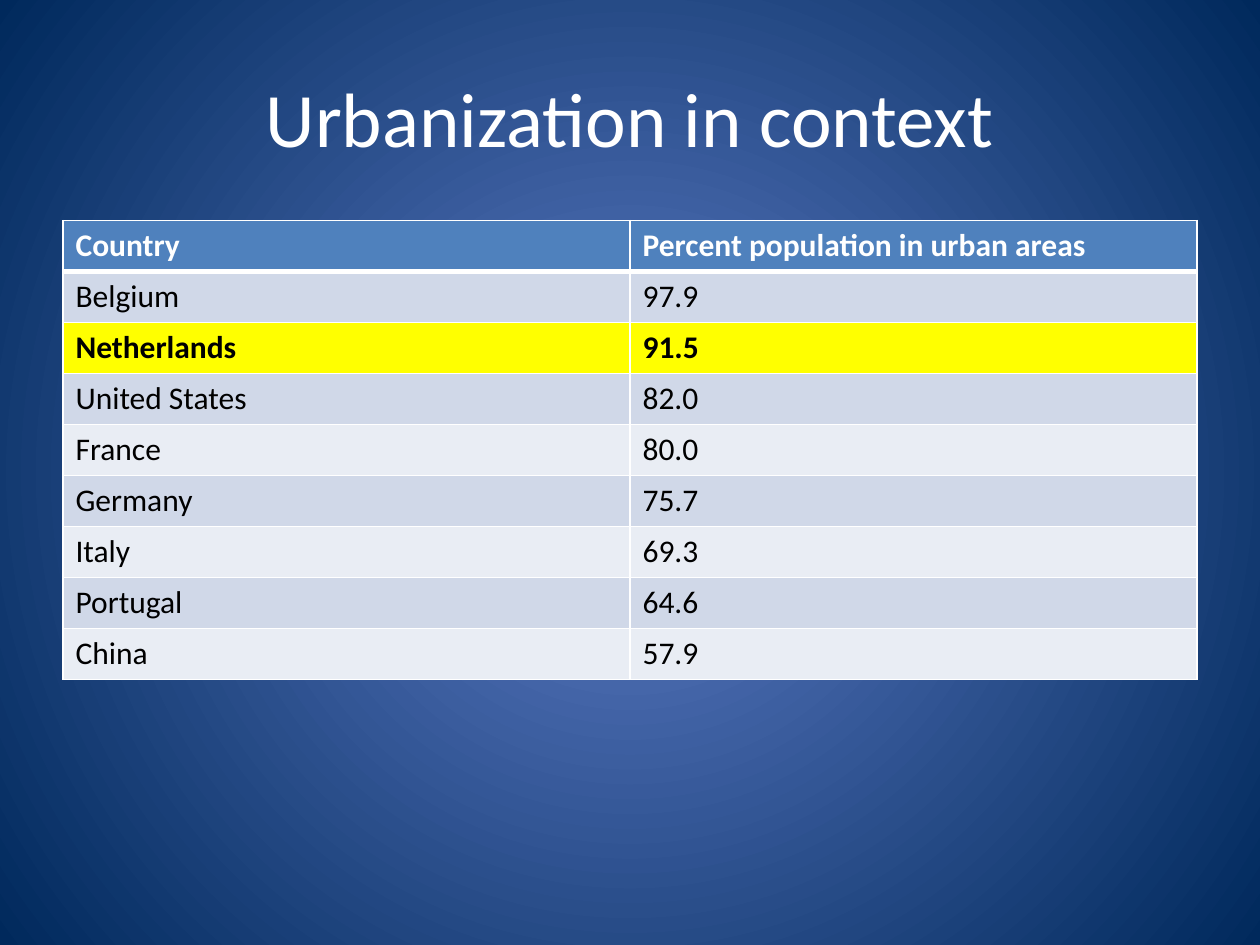
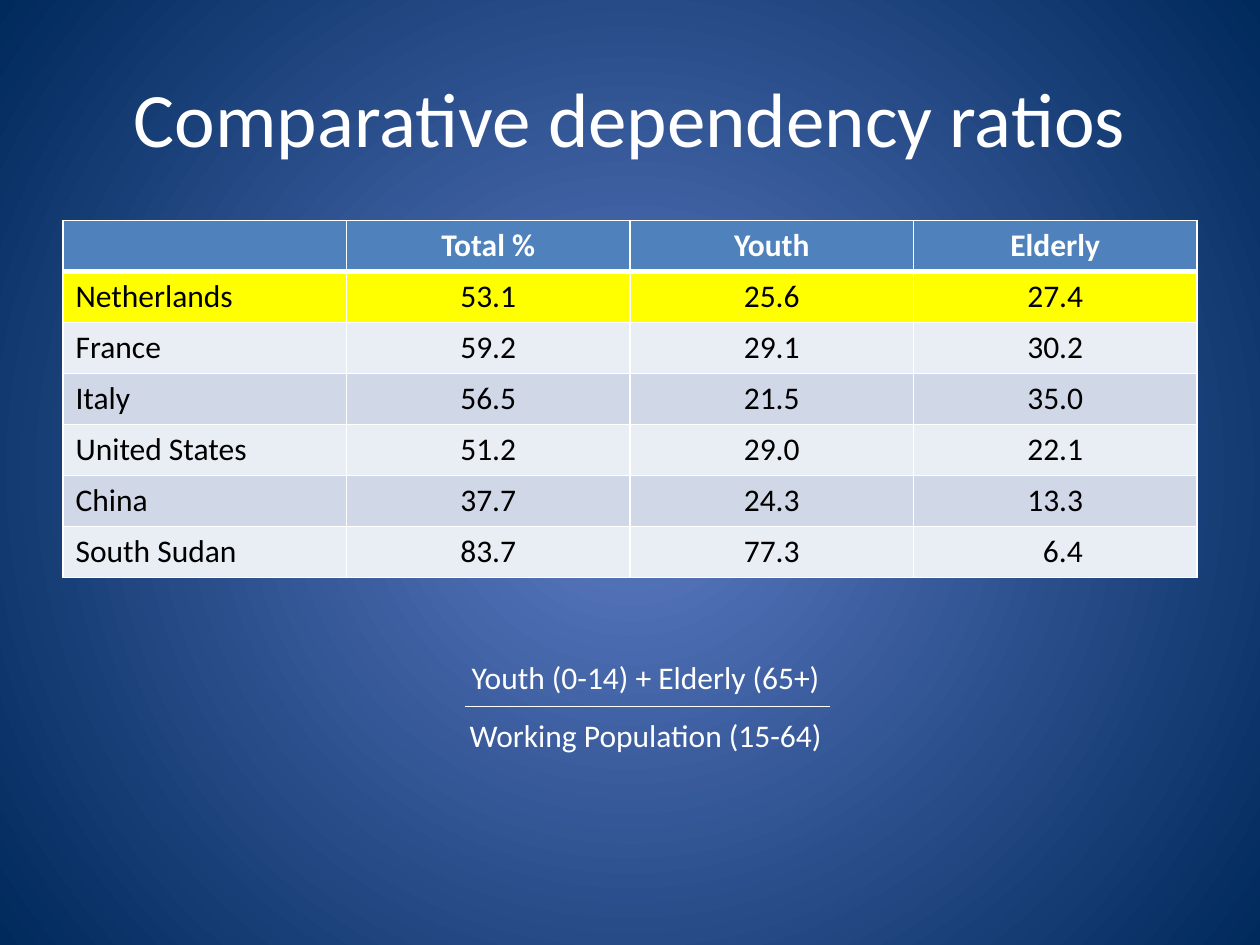
import dataclasses

import lxml.etree
import pptx
import pptx.dml.color
import pptx.enum.shapes
import pptx.enum.text
import pptx.oxml.ns
import pptx.util

# Shared look
FONT = "Calibri"
WHITE, BLACK = "FFFFFF", "000000"
GLOW, NAVY = "5E7CC5", "00295C"
HEADER, HIGHLIGHT = "4F81BD", "FFFF00"
BANDS = ("D0D8E8", "E9EDF4")
BODY_SIZE, TITLE_SIZE = 18, 44
LEFT, CENTER = pptx.enum.text.PP_ALIGN.LEFT, pptx.enum.text.PP_ALIGN.CENTER

# Slide grid: 20 columns by 30 rows
WIDTH, HEIGHT = pptx.util.Inches(10), pptx.util.Inches(7.5)
COLS, ROWS = 20, 30
TABLE_ROW = 1.62


@dataclasses.dataclass(frozen=True)
class Box:
    col: float
    row: float
    cols: float
    rows: float

    def emu(self) -> tuple[int, int, int, int]:
        return x(self.col), y(self.row), x(self.cols), y(self.rows)


@dataclasses.dataclass(frozen=True)
class CountryTable:
    title: str
    rows: list[tuple[str, ...]]
    value_align: pptx.enum.text.PP_ALIGN
    bold_highlight: bool


TITLE_BOX = Box(1, 1.2, 18, 5)
RATIO_BOX = Box(6.5, 20.68, 7.5, 3.56)

URBANIZATION = CountryTable(
    "Urbanization in context",
    [
        ("Country", "Percent population in urban areas"),
        ("Belgium", "97.9"),
        ("Netherlands", "91.5"),
        ("United States", "82.0"),
        ("France", "80.0"),
        ("Germany", "75.7"),
        ("Italy", "69.3"),
        ("Portugal", "64.6"),
        ("China", "57.9"),
    ],
    LEFT,
    True,
)
DEPENDENCY = CountryTable(
    "Comparative dependency ratios",
    [
        ("", "Total %", "Youth", "Elderly"),
        ("Netherlands", "53.1", "25.6", "27.4"),
        ("France", "59.2", "29.1", "30.2"),
        ("Italy", "56.5", "21.5", "35.0"),
        ("United States", "51.2", "29.0", "22.1"),
        ("China", "37.7", "24.3", "13.3"),
        ("South Sudan", "83.7", "77.3", "6.4"),
    ],
    CENTER,
    False,
)


def x(cols: float) -> int:
    return round(WIDTH * cols / COLS)


def y(rows: float) -> int:
    return round(HEIGHT * rows / ROWS)


def rgb(color: str) -> pptx.dml.color.RGBColor:
    return pptx.dml.color.RGBColor.from_string(color)


def add_run(p, text: str, size: float, color: str, bold: bool = False) -> None:
    r = p.add_run()
    r.text = text
    r.font.name, r.font.size = FONT, pptx.util.Pt(size)
    r.font.bold, r.font.color.rgb = bold, rgb(color)


def set_background(master) -> None:
    fill = master.background.fill
    fill.gradient()
    for stop, color in zip(fill.gradient_stops, (GLOW, NAVY)):
        stop.color.rgb = rgb(color)
    # Turn the linear gradient into a circle from the slide's centre
    lin = master.element.xpath(".//p:bg//a:lin")[0]
    circle = lxml.etree.Element(pptx.oxml.ns.qn("a:path"), path="circle")
    centre = dict.fromkeys("ltrb", "50000")
    lxml.etree.SubElement(circle, pptx.oxml.ns.qn("a:fillToRect"), centre)
    lin.getparent().replace(lin, circle)


def add_text(slide, box: Box, lines: list[str], size: float, gap: float = 0):
    tf = slide.shapes.add_textbox(*box.emu()).text_frame
    tf.word_wrap = True
    for i, line in enumerate(lines):
        p = tf.paragraphs[0] if i == 0 else tf.add_paragraph()
        p.alignment = CENTER
        p.space_before = pptx.util.Pt(gap if i else 0)
        add_run(p, line, size, WHITE)
    return tf


def set_borders(cell, top: float, bottom: float) -> None:
    tc_pr = cell._tc.get_or_add_tcPr()
    for side, width in (("L", 1), ("R", 1), ("T", top), ("B", bottom)):
        ln = lxml.etree.SubElement(
            tc_pr, pptx.oxml.ns.qn(f"a:ln{side}"), w=str(pptx.util.Pt(width)))
        solid = lxml.etree.SubElement(ln, pptx.oxml.ns.qn("a:solidFill"))
        lxml.etree.SubElement(solid, pptx.oxml.ns.qn("a:srgbClr"), val=WHITE)


def add_country_table(slide, spec: CountryTable) -> None:
    n_rows, n_cols = len(spec.rows), len(spec.rows[0])
    box = Box(1, 7, 18, TABLE_ROW * n_rows)
    table = slide.shapes.add_table(n_rows, n_cols, *box.emu()).table
    for i, row in enumerate(spec.rows):
        header, highlight = i == 0, row[0] == "Netherlands"
        band = HIGHLIGHT if highlight else BANDS[(i - 1) % 2]
        for j, text in enumerate(row):
            cell = table.cell(i, j)
            set_borders(cell, 3 if i == 1 else 1, 3 if header else 1)
            cell.fill.solid()
            cell.fill.fore_color.rgb = rgb(HEADER if header else band)
            p = cell.text_frame.paragraphs[0]
            p.alignment = spec.value_align if j else LEFT
            if text:
                add_run(p, text, BODY_SIZE, WHITE if header else BLACK,
                        header or (highlight and spec.bold_highlight))
            # Line up a one-digit value with the two-digit ones above
            if j and len(text) == 3:
                cell.margin_left = pptx.util.Inches(0.22)


def add_rule(slide, col: float, row: float, cols: float) -> None:
    sp = slide.shapes.add_connector(
        pptx.enum.shapes.MSO_CONNECTOR.STRAIGHT, x(col), y(row), x(col + cols), y(row))
    sp.line.color.rgb = rgb(WHITE)
    sp.line.width = pptx.util.Pt(0.75)
    lxml.etree.SubElement(sp.element.spPr, pptx.oxml.ns.qn("a:effectLst"))


def add_table_slide(prs, spec: CountryTable):
    slide = prs.slides.add_slide(prs.slide_layouts[6])
    tf = add_text(slide, TITLE_BOX, [spec.title], TITLE_SIZE)
    tf.vertical_anchor = pptx.enum.text.MSO_ANCHOR.MIDDLE
    add_country_table(slide, spec)
    return slide


def main() -> None:
    prs = pptx.Presentation()
    prs.slide_width, prs.slide_height = WIDTH, HEIGHT
    set_background(prs.slide_master)

    # Urbanization
    add_table_slide(prs, URBANIZATION)

    # Dependency ratios, with the formula as a fraction
    slide = add_table_slide(prs, DEPENDENCY)
    add_text(slide, RATIO_BOX,
             ["Youth (0-14) + Elderly (65+)", "Working Population (15-64)"],
             BODY_SIZE, gap=12)
    add_rule(slide, 7.38, 22.44, 5.8)

    prs.save("out.pptx")


if __name__ == "__main__":
    main()
